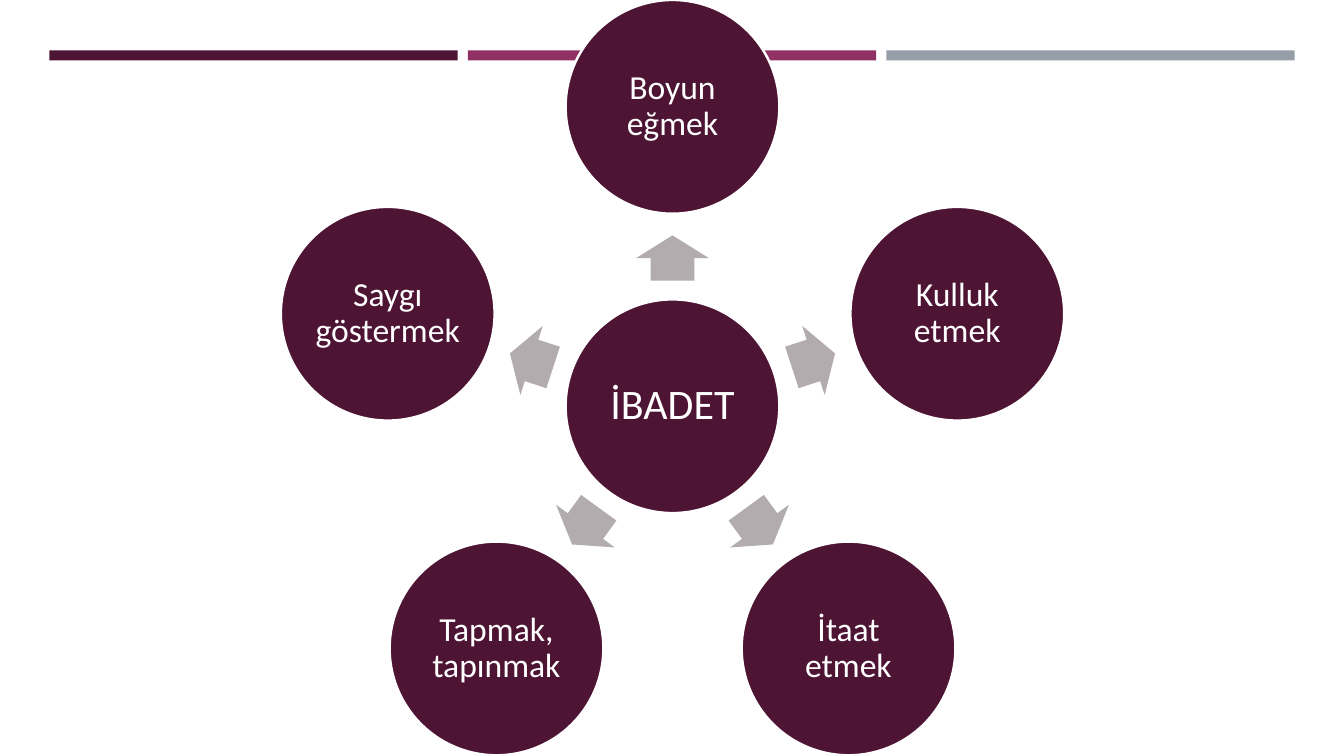
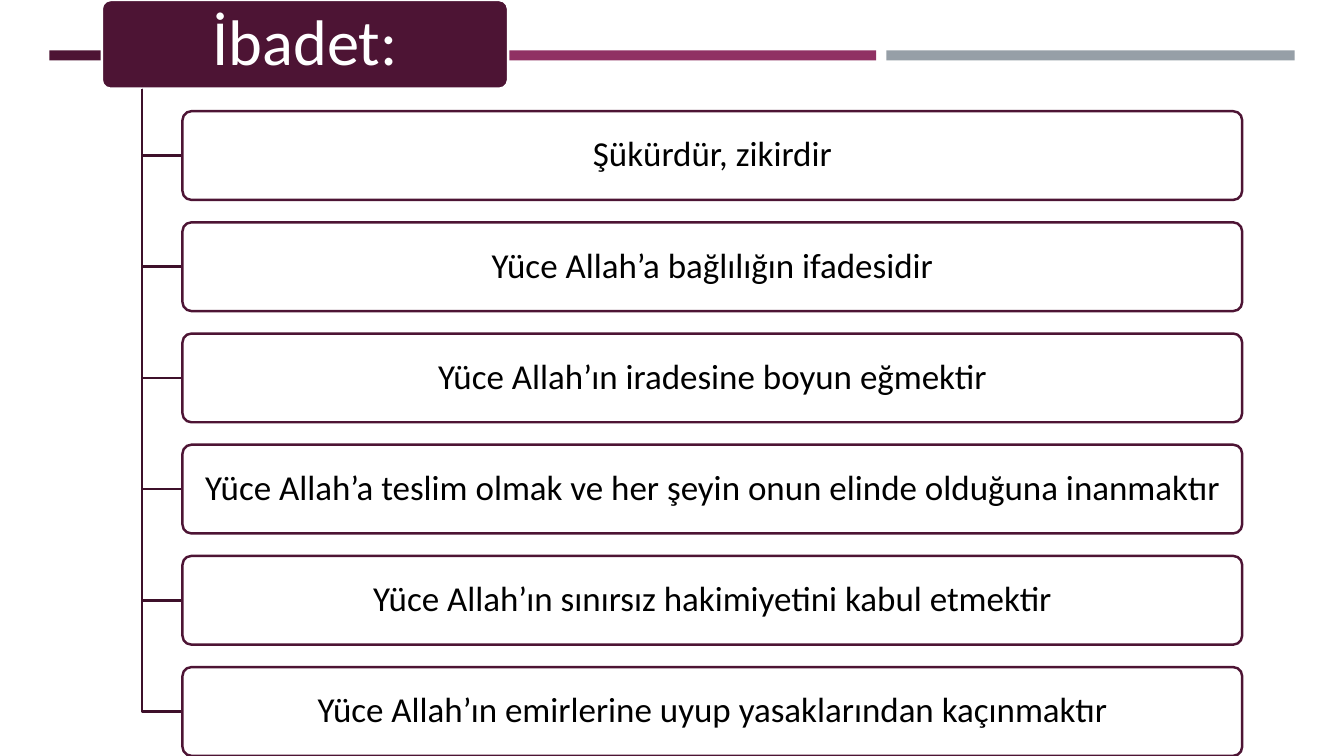
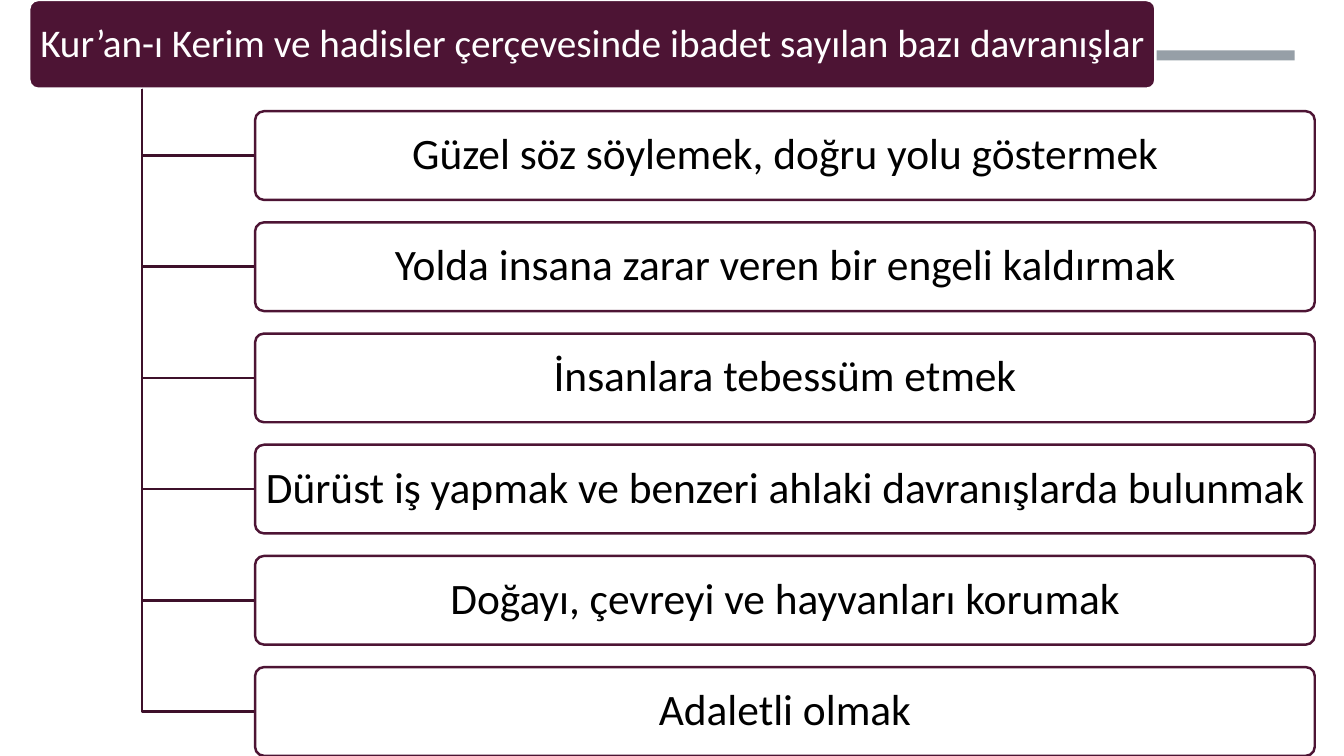
import math

from lxml import etree
from pptx import Presentation
from pptx.dml.color import RGBColor
from pptx.enum import shapes, text
from pptx.oxml.ns import qn
from pptx.util import Inches, Pt

PLUM, MAGENTA, GREY = "4D1434", "903163", "969FA7"
BRANCH, ARROW, WHITE, BLACK = "3E102A", "B2ACAE", "FFFFFF", "000000"
FONT = "Calibri"
LINE_WIDTH = 1.75
TITLE_ONLY = 5

SYNONYMS = ["Boyun eğmek", "Kulluk etmek", "İtaat etmek", "Tapmak, tapınmak",
            "Saygı göstermek"]
MEANINGS = [
    "Şükürdür, zikirdir",
    "Yüce Allah’a bağlılığın ifadesidir",
    "Yüce Allah’ın iradesine boyun eğmektir",
    "Yüce Allah’a teslim olmak ve her şeyin onun elinde olduğuna inanmaktır",
    "Yüce Allah’ın sınırsız hakimiyetini kabul etmektir",
    "Yüce Allah’ın emirlerine uyup yasaklarından kaçınmaktır",
]
GOOD_DEEDS = [
    "Güzel söz söylemek, doğru yolu göstermek",
    "Yolda insana zarar veren bir engeli kaldırmak",
    "İnsanlara tebessüm etmek",
    "Dürüst iş yapmak ve benzeri ahlaki davranışlarda bulunmak",
    "Doğayı, çevreyi ve hayvanları korumak",
    "Adaletli olmak",
]


def rgb(code):
    return RGBColor.from_string(code)


def paint(shape, fill=None, line=None, opacity=100):
    """Set fill and outline; None leaves that part out."""
    shape.shadow.inherit = False
    if fill:
        shape.fill.solid()
        shape.fill.fore_color.rgb = rgb(fill)
        if opacity < 100:
            tint = shape.element.spPr.find(qn("a:solidFill"))[0]
            etree.SubElement(tint, qn("a:alpha"), val=str(opacity * 1000))
    else:
        shape.fill.background()
    if line:
        shape.line.color.rgb = rgb(line)
        shape.line.width = Pt(LINE_WIDTH)
    else:
        shape.line.fill.background()


def add_block(slide, kind, left, top, width, height, **colours):
    block = slide.shapes.add_shape(
        kind, Inches(left), Inches(top), Inches(width), Inches(height))
    paint(block, **colours)
    return block


def write(shape, words, size, colour, inset):
    frame = shape.text_frame
    frame.word_wrap = True
    frame.auto_size = text.MSO_AUTO_SIZE.NONE
    frame.vertical_anchor = text.MSO_ANCHOR.MIDDLE
    frame.margin_left = frame.margin_right = Inches(inset)
    frame.margin_top = frame.margin_bottom = Inches(inset)
    paragraph = frame.paragraphs[0]
    paragraph.alignment = text.PP_ALIGN.CENTER
    paragraph.line_spacing = 0.9
    run = paragraph.add_run()
    run.text = words
    run.font.name = FONT
    run.font.size = Pt(size)
    run.font.color.rgb = rgb(colour)


def place_title(slide, words, size, left, top, width, height):
    """Lay the title placeholder over what has been drawn so far."""
    title = slide.shapes.title
    title.left, title.top = Inches(left), Inches(top)
    title.width, title.height = Inches(width), Inches(height)
    write(title, words, size, WHITE, 0.04)
    slide.shapes.element.append(title.element)


def add_master_bands(prs, slide):
    """Draw the three top bands on a slide, then move them to the master."""
    for i, colour in enumerate([PLUM, MAGENTA, GREY]):
        band = add_block(slide, shapes.MSO_SHAPE.RECTANGLE,
                         0.49 + 4.15 * i, 0.5, 4.05, 0.1, fill=colour)
        prs.slide_master.shapes.element.append(band.element)


def radial_diagram(slide, hub, satellites, center_x, center_y):
    """A hub circle with satellites at equal angles, clockwise from the top."""
    diameter, orbit, arrow_orbit = 2.12, 2.97, 1.47
    arrow_width, arrow_height = 0.45, 0.72

    def circle(x, y):
        return add_block(slide, shapes.MSO_SHAPE.OVAL, x - diameter / 2,
                         y - diameter / 2, diameter, diameter,
                         fill=PLUM, line=WHITE)

    circle(center_x, center_y)
    place_title(slide, hub, 30, center_x - 0.75, center_y - 0.75, 1.5, 1.5)
    for i, words in enumerate(satellites):
        angle = -90 + i * 360 / len(satellites)
        dx, dy = math.cos(math.radians(angle)), math.sin(math.radians(angle))
        arrow = add_block(slide, shapes.MSO_SHAPE.RIGHT_ARROW,
                          center_x + arrow_orbit * dx - arrow_width / 2,
                          center_y + arrow_orbit * dy - arrow_height / 2,
                          arrow_width, arrow_height, fill=ARROW)
        arrow.adjustments[0], arrow.adjustments[1] = 0.6, 0.5
        arrow.rotation = angle % 360
        satellite = circle(center_x + orbit * dx, center_y + orbit * dy)
        write(satellite, words, 24, WHITE, 0.02)


def add_branch(slide, trunk_x, top, end_x, end_y):
    builder = slide.shapes.build_freeform(Inches(trunk_x), Inches(top))
    builder.add_line_segments(
        [(Inches(trunk_x), Inches(end_y)), (Inches(end_x), Inches(end_y))],
        close=False)
    paint(builder.convert_to_shape(), line=BRANCH)


def hierarchy(slide, heading, heading_size, heading_left, heading_width,
              items, item_size, item_left):
    """A heading box with a trunk that branches to a column of item boxes."""
    height, pitch, item_width, trunk_x = 0.88, 1.103, 10.51, 1.41
    margin = 0.03

    def box(left, top, width, **colours):
        rounded = add_block(slide, shapes.MSO_SHAPE.ROUNDED_RECTANGLE,
                            left, top, width, height, **colours)
        rounded.adjustments[0] = 0.1
        return rounded

    box(heading_left, 0, heading_width, fill=PLUM, line=WHITE)
    place_title(slide, heading, heading_size, heading_left + margin, margin,
                heading_width - 2 * margin, height - 2 * margin)
    for row, words in enumerate(items, start=1):
        top = row * pitch
        add_branch(slide, trunk_x, height, item_left, top + height / 2)
        item = box(item_left, top, item_width,
                   fill=WHITE, line=PLUM, opacity=90)
        write(item, words, item_size, BLACK, 0.05)


def main():
    prs = Presentation()
    prs.slide_width, prs.slide_height = Inches(13.33), Inches(7.5)
    layout = prs.slide_layouts[TITLE_ONLY]
    synonyms, meanings, deeds = [prs.slides.add_slide(layout) for _ in range(3)]

    add_master_bands(prs, synonyms)
    radial_diagram(synonyms, "İBADET", SYNONYMS, 6.67, 4.03)
    hierarchy(meanings, "İbadet:", 46, 1.01, 4.03, MEANINGS, 25, 1.81)
    hierarchy(deeds,
              "Kur’an-ı Kerim ve hadisler çerçevesinde ibadet sayılan bazı davranışlar",
              28, 0.29, 11.17, GOOD_DEEDS, 31, 2.53)
    prs.save("out.pptx")


if __name__ == "__main__":
    main()
